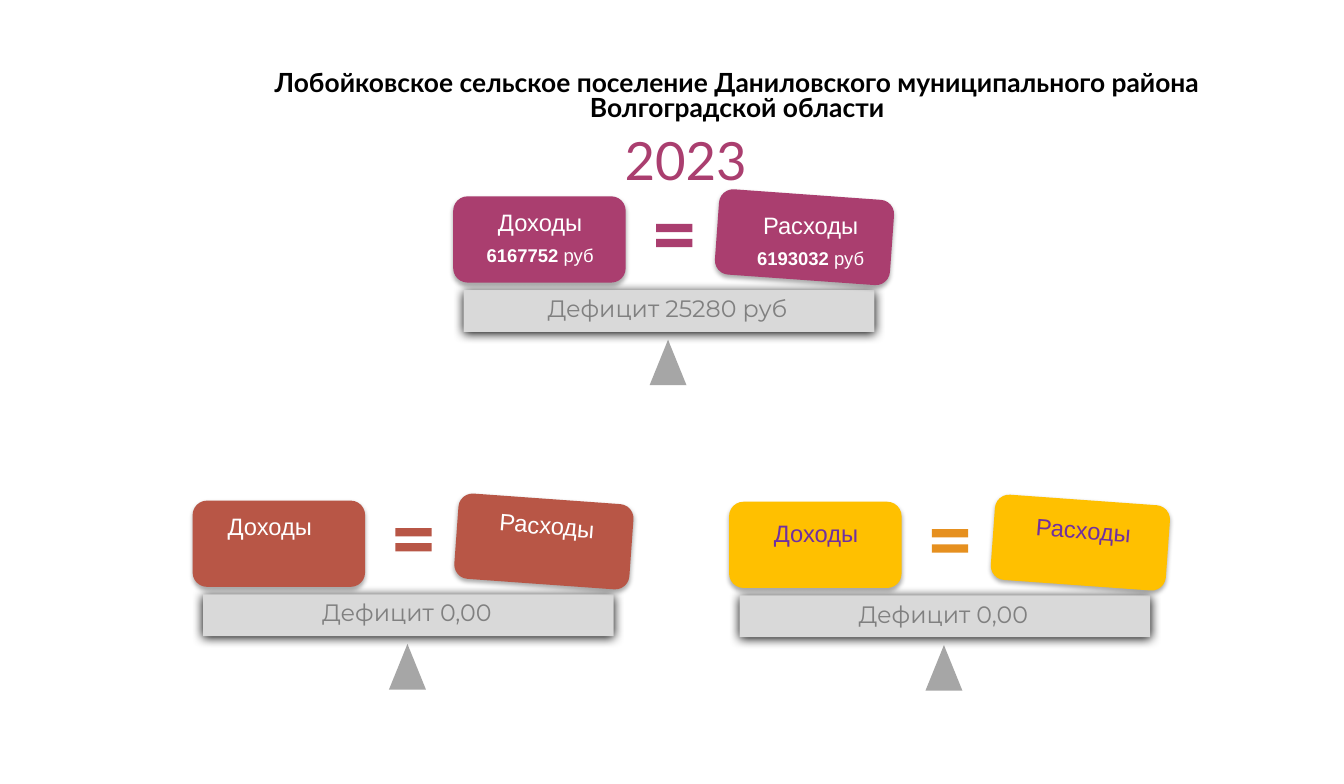
import pptx
import pptx.util
import pptx.dml.color
import pptx.enum.shapes
import pptx.enum.text
import pptx.oxml

Cm = pptx.util.Cm
Pt = pptx.util.Pt
FORM = pptx.enum.shapes.MSO_SHAPE
ALIGN = pptx.enum.text.PP_ALIGN
SPACE = "http://schemas.openxmlformats.org/drawingml/2006/main"
BEAM = {"alpha": 100, "blur": 8.5, "dist": 1}
CARD = {"alpha": 32, "blur": 3.5, "dist": 2.2}
WORD = {"name": "Arial", "size": Pt(18), "bold": False}
COUNT = {"name": "Arial", "size": Pt(14), "bold": True}
UNIT = {**COUNT, "bold": False}
NOTE = {"name": "Montserrat", "size": Pt(18)}
YEAR = {"name": "Lato", "size": Pt(40)}
HEAD = {"name": "Lato", "size": Pt(20), "bold": True}


def hue(code):
    return pptx.dml.color.RGBColor.from_string(code)


def place(box, part):
    left, top = box[:2]
    x, y, wide, high = part
    return Cm(left + x), Cm(top + y), Cm(wide), Cm(high)


def shade(shape, alpha, blur, dist):
    shape._element.spPr.append(pptx.oxml.parse_xml(
        f'<a:effectLst xmlns:a="{SPACE}"><a:outerShdw blurRad="{Pt(blur)}" '
        f'dist="{Pt(dist)}" dir="5400000" algn="t" rotWithShape="0">'
        f'<a:srgbClr val="000000"><a:alpha val="{alpha * 1000}"/></a:srgbClr>'
        '</a:outerShdw></a:effectLst>'))


def block(slide, form, box, part, tint, glow=None, turn=0):
    shape = slide.shapes.add_shape(form, *place(box, part))
    shape.fill.solid()
    shape.fill.fore_color.rgb = hue(tint)
    shape.line.fill.background()
    shape.rotation = turn
    if glow:
        shade(shape, **glow)
    else:
        shape.shadow.inherit = False
    return shape


def label(slide, box, part, lines, tint, layout=None, turn=0):
    shape = slide.shapes.add_textbox(*place(box, part))
    shape.rotation = turn
    frame = shape.text_frame
    frame.word_wrap = True
    frame.auto_size = pptx.enum.text.MSO_AUTO_SIZE.SHAPE_TO_FIT_TEXT
    for index, runs in enumerate(lines):
        para = frame.add_paragraph() if index else frame.paragraphs[0]
        for key, value in {"alignment": ALIGN.CENTER, **(layout or {})}.items():
            setattr(para, key, value)
        for text, style in runs:
            run = para.add_run()
            run.text = text
            run.font.color.rgb = hue(tint)
            for key, value in style.items():
                setattr(run.font, key, value)
    return shape


def header(slide, box):
    back = block(slide, FORM.RECTANGLE, box, (0, 0, *box[2:]), "FFFFFF")
    tone = back.fill._xPr.find(f".//{{{SPACE}}}srgbClr")
    tone.append(pptx.oxml.parse_xml(f'<a:alpha xmlns:a="{SPACE}" val="74000"/>'))
    label(slide, box, (15.37, 2.51, 4.27, 2.03), [[("2023", YEAR)]], "AA3E6F")
    title = label(slide, box, (4.85, 1.01, 26.8, 1.63), [[(
        "Лобойковское сельское поселение Даниловского муниципального района "
        "Волгоградской области", HEAD)]], "000000", {"line_spacing": 0.8})
    props = title.text_frame.paragraphs[0]._p.get_or_add_pPr()
    props.set("marL", str(Cm(1.27)))
    props.set("indent", "0")


def scale(slide, box, tint, sign, ink, note, sides):
    block(slide, FORM.ISOSCELES_TRIANGLE, box, (5.26, 3.84, 0.99, 1.22), "A6A6A6")
    block(slide, FORM.RECTANGLE, box, (0.28, 2.51, 11, 1.12), "D9D9D9", BEAM)
    label(slide, box, (1.04, 2.49, 9.4, 1.02), [[(note, NOTE)]], "808080")
    cards = (((0, 0, 4.62, 2.31), 0), ((7.06, -0.05, 4.7, 2.29), 4.1))
    for part, turn in cards:
        block(slide, FORM.FLOWCHART_ALTERNATE_PROCESS, box, part, tint, CARD, turn)
    for name, (part, turn, count) in zip(("Доходы", "Расходы"), sides):
        lines = [[(name, WORD)]]
        if count:
            lines.append([(count + " ", COUNT), ("руб", UNIT)])
        label(slide, box, part, lines, ink, {"space_after": Pt(6)}, turn)
    equal = block(slide, FORM.MATH_EQUAL, box, (5.26, 0.58, 1.32, 0.94), sign)
    for index, value in enumerate((0.235, 0.195)):
        equal.adjustments[index] = value


def main():
    deck = pptx.Presentation()
    deck.slide_width, deck.slide_height = Cm(36), Cm(21)
    slide = deck.slides.add_slide(deck.slide_layouts[6])
    header(slide, (0.86, 0.79, 34.26, 19.53))
    scale(slide, (12.14, 5.26), "AA3E6F", "AA3E6F", "FFFFFF", "Дефицит 25280 руб",
          (((0.08, 0.18, 4.5, 1.83), 0, "6167752"),
           ((7.24, 0.25, 4.67, 1.83), 0, "6193032")))
    scale(slide, (5.16, 13.41), "B85646", "B85646", "FFFFFF", "Дефицит 0,00",
          (((-0.18, 0.18, 4.5, 1.83), 0, ""), ((7.21, 0.15, 4.5, 1.83), 4.7, "")))
    scale(slide, (19.53, 13.44), "FFC000", "E6901F", "7030A0", "Дефицит 0,00",
          (((0.08, 0.33, 4.5, 1.02), 0, ""), ((7.21, 0.25, 4.5, 1.83), 4.7, "")))
    deck.save("out.pptx")


if __name__ == "__main__":
    main()
